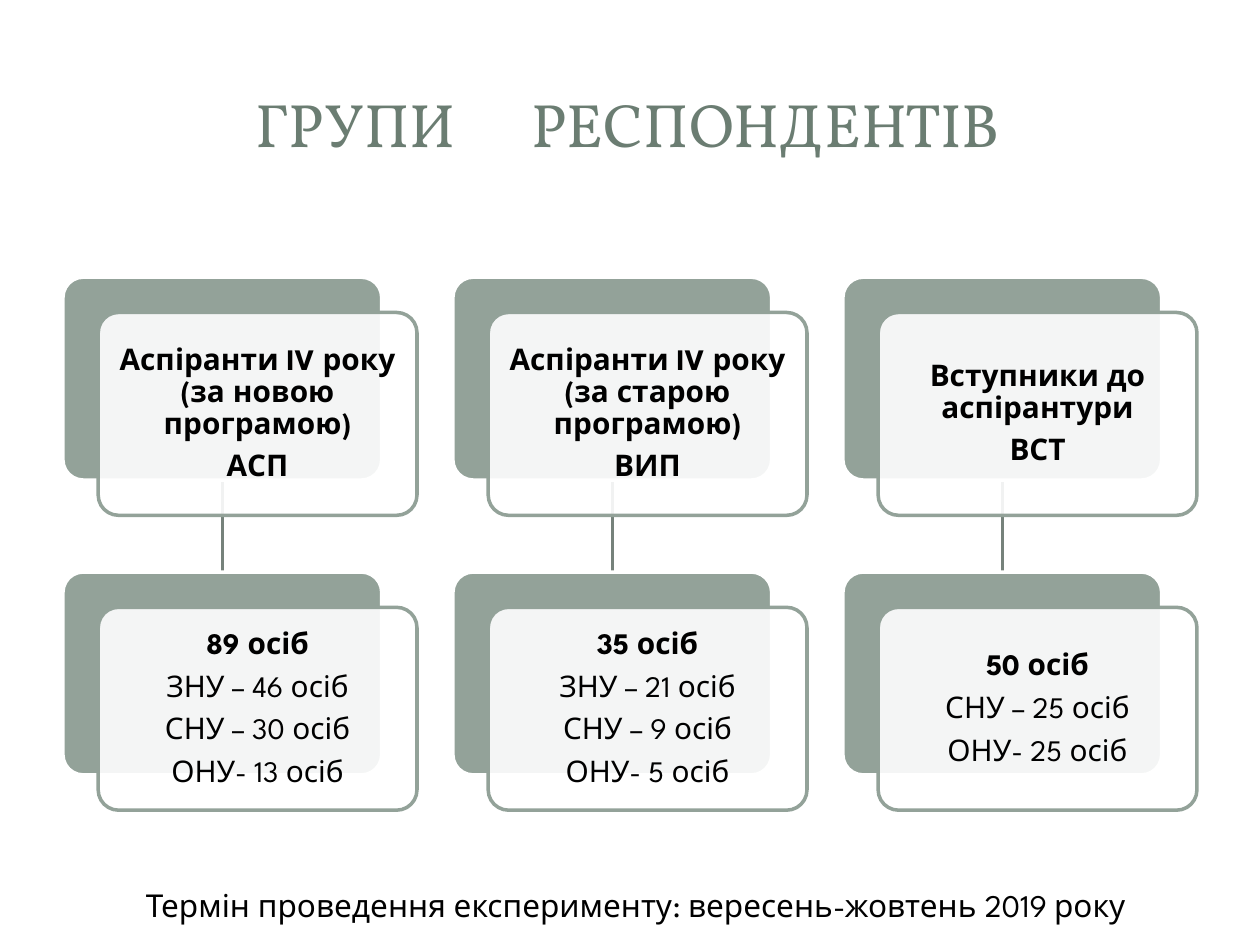
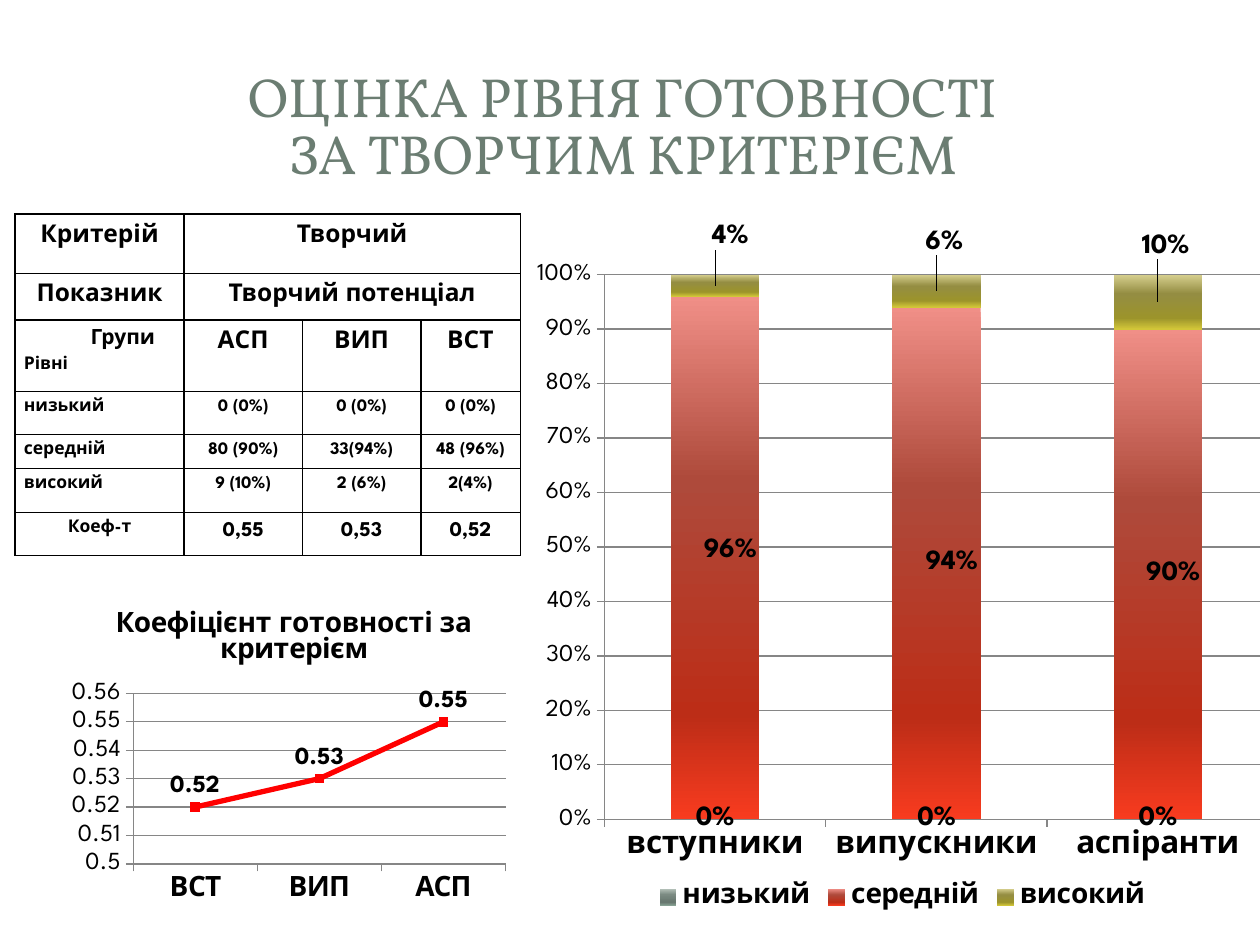
from dataclasses import dataclass

from lxml.etree import SubElement
from pptx import Presentation
from pptx.chart.data import CategoryChartData
from pptx.dml.color import RGBColor
from pptx.enum.chart import (XL_CHART_TYPE, XL_LABEL_POSITION, XL_LEGEND_POSITION,
                             XL_MARKER_STYLE, XL_TICK_MARK)
from pptx.enum.shapes import MSO_CONNECTOR, MSO_SHAPE
from pptx.enum.text import MSO_ANCHOR, MSO_AUTO_SIZE, PP_ALIGN
from pptx.oxml import parse_xml
from pptx.oxml.ns import nsdecls, qn
from pptx.util import Inches, Pt

BODY_FONT, TITLE_FONT = "League Spartan", "Vollkorn"
BLACK, WHITE, SAGE, GREY, RED = "000000", "FFFFFF", "93A299", "868686", "FF0000"
TITLE_COLOR, LINK_COLOR = "6B7D72", "76827B"
CARD_WIDTH, CARD_HEIGHT = Inches(2.53), Inches(1.61)
CARD_LEFT, CARD_STEP = Inches(0.5), Inches(6.19) // 2
GROUP_TOP, COUNT_TOP = Inches(2.2), Inches(4.54)
CARD_SHIFT = Inches(0.28)


@dataclass
class Group:
    name: list[str]
    counts: list[str]


@dataclass
class Level:
    name: str
    values: list[float]
    gradient: list[str]
    label_shifts: list[tuple[float, float]]


GROUPS = [
    Group(["Аспіранти IV року (за новою програмою)", "АСП"],
          ["89 осіб", "ЗНУ – 46 осіб", "СНУ – 30 осіб", "ОНУ- 13 осіб"]),
    Group(["Аспіранти IV року (за старою програмою)", "ВИП"],
          ["35 осіб", "ЗНУ – 21 осіб", "СНУ – 9 осіб", "ОНУ- 5 осіб"]),
    Group(["Вступники до аспірантури", "ВСТ"],
          ["50 осіб", "СНУ – 25 осіб", "ОНУ- 25 осіб"]),
]
LEVELS = [
    Level("низький", [0, 0, 0], ["B5C2BA", "7A8981", "66766E", "87A193"], []),
    Level("середній", [0.96, 0.94, 0.9], ["F08F87", "AE4A3B", "BC2D17", "F83B1F"],
          [(0.02, -0.01), (0.02, 0), (0.02, 0)]),
    Level("високий", [0.04, 0.06, 0.1], ["D6CF8E", "948D42", "9C942B", "D2C638"],
          [(0.02, -0.07), (0.01, -0.07), (0.01, -0.08)]),
]
TABLE_ROWS = [
    ["Критерій", "Творчий"],
    ["Показник", "Творчий потенціал"],
    ["Групи", "АСП", "ВИП", "ВСТ"],
    ["низький", "0 (0%)", "0 (0%)", "0 (0%)"],
    ["середній", "80 (90%)", "33(94%)", "48 (96%)"],
    ["високий", "9 (10%)", "2 (6%)", "2(4%)"],
    ["Коеф-т", "0,55", "0,53", "0,52"],
]
COLUMN_WIDTHS = [1.34, 0.94, 0.94, 0.79]
ROW_HEIGHTS = [0.47, 0.37, 0.57, 0.34, 0.27, 0.35, 0.34]
ROW_SIZES = [14, 14, 14, 10, 10, 10, 12]


def rgb(color: str) -> RGBColor:
    return RGBColor.from_string(color)


def style_font(font, size: float, color: str = BLACK, bold: bool = False,
               name: str = BODY_FONT) -> None:
    font.name, font.size, font.bold = name, Pt(size), bold
    font.color.rgb = rgb(color)


def write(para, text: str, *, align=PP_ALIGN.LEFT, spacing: float = 1.0,
          after: float = 0, **font):
    para.alignment, para.line_spacing, para.space_after = align, spacing, Pt(after)
    span = para.add_run()
    span.text = text
    style_font(span.font, **font)
    return span


def paragraph(frame, index: int):
    return frame.paragraphs[0] if index == 0 else frame.add_paragraph()


def set_insets(frame, side, end) -> None:
    frame.margin_left = frame.margin_right = side
    frame.margin_top = frame.margin_bottom = end


def add_titled_page(deck, size: float):
    page = deck.slides.add_slide(deck.slide_layouts[5])
    title = page.shapes.title
    title.left, title.top = Inches(0.47), Inches(0.45)
    title.width, title.height = Inches(9.03), Inches(1.14)
    frame = title.text_frame
    frame.word_wrap, frame.auto_size = True, MSO_AUTO_SIZE.NONE
    frame.vertical_anchor = MSO_ANCHOR.MIDDLE
    style = dict(align=PP_ALIGN.CENTER, spacing=0.86, size=size,
                 color=TITLE_COLOR, name=TITLE_FONT)
    return page, frame.paragraphs[0], style


def add_panel(page, left, top, fill: str, line: str):
    panel = page.shapes.add_shape(MSO_SHAPE.ROUNDED_RECTANGLE, left, top, CARD_WIDTH, CARD_HEIGHT)
    panel.adjustments[0] = 0.1
    panel.shadow.inherit = False
    panel.fill.solid()
    panel.fill.fore_color.rgb = rgb(fill)
    panel.line.color.rgb = rgb(line)
    panel.line.width = Pt(2)
    return panel


def add_card(page, left, top, lines: list[str], bold_lines: int):
    back = add_panel(page, left, top, SAGE, WHITE)
    front = add_panel(page, left + CARD_SHIFT, top + CARD_SHIFT, WHITE, SAGE)
    color = front.fill._xPr.find(qn("a:solidFill"))[0]
    SubElement(color, qn("a:alpha")).set("val", "90000")
    frame = front.text_frame
    frame.word_wrap, frame.vertical_anchor = True, MSO_ANCHOR.MIDDLE
    set_insets(frame, Inches(0.07), Inches(0.07))
    for index, line in enumerate(lines):
        write(paragraph(frame, index), line, align=PP_ALIGN.CENTER, spacing=0.9,
              after=6, size=17, bold=index < bold_lines)
    return back


def add_link(page, left):
    middle = left + CARD_WIDTH // 2
    link = page.shapes.add_connector(MSO_CONNECTOR.STRAIGHT, middle,
                                     GROUP_TOP + CARD_HEIGHT, middle, COUNT_TOP)
    link.line.color.rgb = rgb(LINK_COLOR)
    link.line.width = Pt(2)
    SubElement(link._element.spPr, qn("a:effectLst"))
    return link


def build_groups_page(deck) -> None:
    page, para, style = add_titled_page(deck, 35)
    write(para, "ГРУПИ", **style)
    gap = write(para, " ", **style)
    gap.font._element.set("spc", "3600")
    write(para, "РЕСПОНДЕНТІВ", **style)
    lefts = [CARD_LEFT + CARD_STEP * index for index in range(len(GROUPS))]
    links = [add_link(page, left) for left in lefts]
    for group, left, link in zip(GROUPS, lefts, links):
        link.begin_connect(add_card(page, left, GROUP_TOP, group.name, 2), 2)
        link.end_connect(add_card(page, left, COUNT_TOP, group.counts, 1), 0)
    box = page.shapes.add_textbox(Inches(1.06), Inches(6.98), Inches(8.33), Inches(0.4))
    box.text_frame.word_wrap = True
    write(box.text_frame.paragraphs[0],
          "Термін проведення експерименту: вересень-жовтень 2019 року", size=18)


def style_cell(cell) -> None:
    set_insets(cell, Inches(0.07), 0)
    properties = cell._tc.get_or_add_tcPr()
    for index, side in enumerate(("lnL", "lnR", "lnT", "lnB")):
        properties.insert(index, parse_xml(
            f'<a:{side} {nsdecls("a")} w="12700"><a:solidFill>'
            f'<a:srgbClr val="{BLACK}"/></a:solidFill></a:{side}>'))
    cell.fill.solid()
    cell.fill.fore_color.rgb = rgb(WHITE)


def add_level_table(page) -> None:
    table = page.shapes.add_table(len(ROW_HEIGHTS), len(COLUMN_WIDTHS), Inches(0.12), Inches(1.7),
                                  Inches(4.02), Inches(2.71)).table
    table.first_row = table.horz_banding = False
    for column, width in zip(table.columns, COLUMN_WIDTHS):
        column.width = Inches(width)
    for row, height in zip(table.rows, ROW_HEIGHTS):
        row.height = Inches(height)
    for cell in table.iter_cells():
        style_cell(cell)
    for row, (texts, size) in enumerate(zip(TABLE_ROWS, ROW_SIZES)):
        if len(texts) == 2:
            table.cell(row, 1).merge(table.cell(row, 3))
        for column, text in enumerate(texts):
            is_level = column == 0 and 2 <= row <= 5
            corner_size = {2: 12, 6: 10}.get(row, size) if column == 0 else size
            write(table.cell(row, column).text_frame.paragraphs[0], text, spacing=1.5,
                  align=PP_ALIGN.JUSTIFY if is_level else PP_ALIGN.CENTER,
                  size=corner_size, bold=True)
    corner = table.cell(2, 0).text_frame
    corner.paragraphs[0]._p.get_or_add_pPr().set("marL", str(Inches(0.53)))
    write(corner.add_paragraph(), "Рівні", align=PP_ALIGN.JUSTIFY, spacing=1.5, size=10, bold=True)


def set_plot_layout(chart, left: float, top: float, width: float, height: float) -> None:
    area = chart._chartSpace.chart.plotArea
    for old in area.findall(qn("c:layout")):
        area.remove(old)
    area.insert(0, parse_xml(
        f'<c:layout {nsdecls("c")}><c:manualLayout><c:layoutTarget val="inner"/>'
        f'<c:xMode val="edge"/><c:yMode val="edge"/><c:x val="{left}"/><c:y val="{top}"/>'
        f'<c:w val="{width}"/><c:h val="{height}"/></c:manualLayout></c:layout>'))


def add_styled_chart(page, kind, bounds, categories: list[str], series, category_size: float,
                     axis_range, step: float, number_format: str):
    data = CategoryChartData()
    data.categories = categories
    for name, values in series:
        data.add_series(name, values)
    chart = page.shapes.add_chart(kind, *map(Inches, bounds), data).chart
    style_font(chart.font, 18)
    category_axis, value_axis = chart.category_axis, chart.value_axis
    style_font(category_axis.tick_labels.font, category_size, bold=True)
    style_font(value_axis.tick_labels.font, 14)
    value_axis.minimum_scale, value_axis.maximum_scale = axis_range
    value_axis.major_unit = step
    value_axis.tick_labels.number_format = number_format
    value_axis.tick_labels.number_format_is_linked = False
    value_axis.has_major_gridlines = True
    value_axis.major_gridlines.format.line.color.rgb = rgb(GREY)
    for axis in (category_axis, value_axis):
        axis.format.line.color.rgb = rgb(GREY)
        axis.major_tick_mark = XL_TICK_MARK.OUTSIDE
    chart.plots[0].vary_by_categories = False
    return chart


def fill_gradient(series, colors: list[str]) -> None:
    stops = "".join(f'<a:gs pos="{position}"><a:srgbClr val="{color}"/></a:gs>'
                    for position, color in zip((0, 35000, 80000, 100000), colors))
    series._element.get_or_add_spPr().append(parse_xml(
        f'<a:gradFill {nsdecls("a")} rotWithShape="1"><a:gsLst>{stops}</a:gsLst>'
        '<a:lin ang="5400000" scaled="0"/></a:gradFill>'))


def shift_label(series, index: int, across: float, down: float) -> None:
    style_font(series.points[index].data_label.font, 16, bold=True)
    label = series._element.find(qn("c:dLbls")).findall(qn("c:dLbl"))[index]
    label[0].addnext(parse_xml(f'<c:numFmt {nsdecls("c")} formatCode="0%" sourceLinked="0"/>'))
    label[0].addnext(parse_xml(
        f'<c:layout {nsdecls("c")}><c:manualLayout><c:x val="{across}"/>'
        f'<c:y val="{down}"/></c:manualLayout></c:layout>'))


def add_level_chart(page) -> None:
    chart = add_styled_chart(
        page, XL_CHART_TYPE.COLUMN_STACKED_100, (4.13, 1.78, 6.06, 5.49),
        ["вступники", "випускники", "аспіранти"],
        [(level.name, level.values) for level in LEVELS], 18, (0, 1), 0.1, "0%")
    chart.has_title = False
    chart.has_legend = True
    chart.legend.position = XL_LEGEND_POSITION.BOTTOM
    chart.legend.include_in_layout = False
    style_font(chart.legend.font, 16, bold=True)
    set_plot_layout(chart, 0.11, 0.07, 0.87, 0.79)
    plot = chart.plots[0]
    plot.gap_width, plot.overlap = 150, 100
    for series, level in zip(plot.series, LEVELS):
        fill_gradient(series, level.gradient)
        labels = series.data_labels
        labels.show_value = True
        labels.number_format, labels.number_format_is_linked = "0%", False
        style_font(labels.font, 16, bold=True)
        for index, shift in enumerate(level.label_shifts):
            shift_label(series, index, *shift)


def add_coefficient_chart(page) -> None:
    chart = add_styled_chart(
        page, XL_CHART_TYPE.LINE_MARKERS, (0.51, 4.69, 3.65, 2.71), ["ВСТ", "ВИП", "АСП"],
        [("Series 1", [0.52, 0.53, 0.55])], 16, (0.5, 0.56), 0.01, "General")
    chart.has_legend = False
    chart.has_title = True
    write(chart.chart_title.text_frame.paragraphs[0], "Коефіцієнт готовності за критерієм",
          align=PP_ALIGN.CENTER, size=16, bold=True)
    set_plot_layout(chart, 0.15, 0.3, 0.81, 0.5)
    series = chart.plots[0].series[0]
    series.smooth = False
    series.format.line.color.rgb = rgb(RED)
    series.format.line.width = Pt(3)
    series.marker.style, series.marker.size = XL_MARKER_STYLE.SQUARE, 5
    series.marker.format.fill.solid()
    series.marker.format.fill.fore_color.rgb = rgb(RED)
    series.marker.format.line.color.rgb = rgb(RED)
    labels = series.data_labels
    labels.show_value, labels.position = True, XL_LABEL_POSITION.ABOVE
    style_font(labels.font, 14, bold=True)


def build_creativity_page(deck) -> None:
    page, para, style = add_titled_page(deck, 31.5)
    write(para, "ОЦІНКА РІВНЯ ГОТОВНОСТІ ", **style)
    para.add_line_break()
    write(para, "ЗА ТВОРЧИМ КРИТЕРІЄМ ", **style)
    add_level_table(page)
    add_level_chart(page)
    add_coefficient_chart(page)


def main() -> None:
    deck = Presentation()
    deck.slide_width, deck.slide_height = Inches(10), Inches(7.5)
    build_groups_page(deck)
    build_creativity_page(deck)
    deck.save("out.pptx")


if __name__ == "__main__":
    main()
